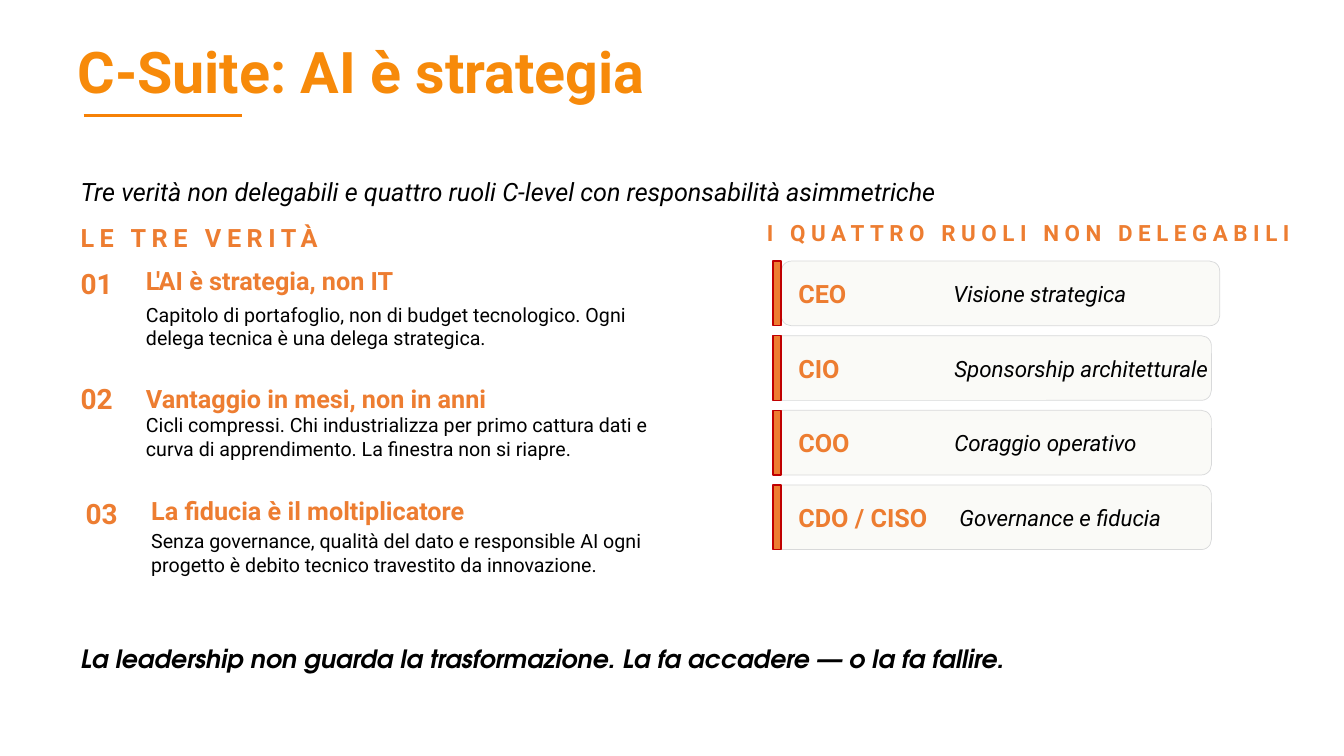
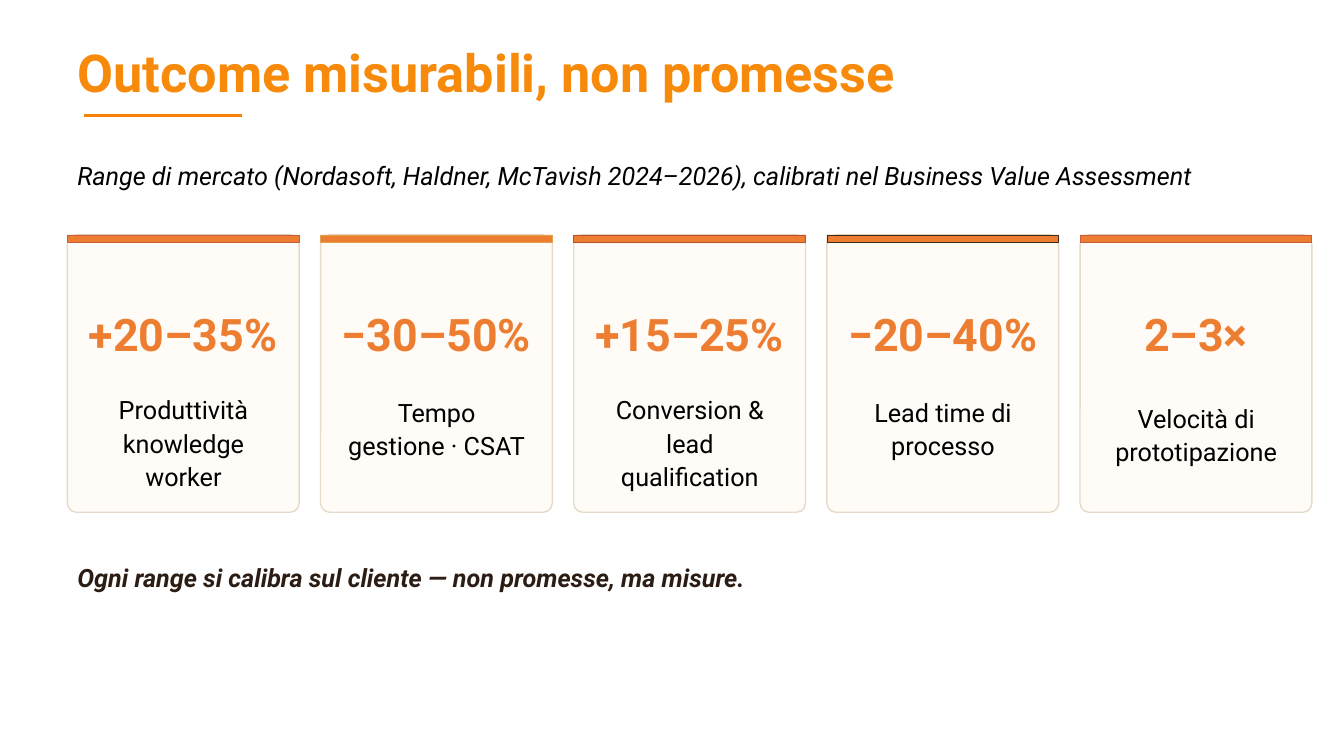
import pptx
import pptx.dml.color
import pptx.enum.shapes
import pptx.enum.text
import pptx.oxml
import pptx.util

Cm = pptx.util.Cm
Pt = pptx.util.Pt
RGBColor = pptx.dml.color.RGBColor
MSO_SHAPE = pptx.enum.shapes.MSO_SHAPE
MSO_ANCHOR = pptx.enum.text.MSO_ANCHOR
PP_ALIGN = pptx.enum.text.PP_ALIGN

FONT = "Roboto"
BLACK = RGBColor(0x00, 0x00, 0x00)
BROWN = RGBColor(0x2B, 0x1D, 0x14)
ORANGE = RGBColor(0xED, 0x7D, 0x31)
TITLE_ORANGE = RGBColor(0xF7, 0x8A, 0x0A)
RULE_ORANGE = RGBColor(0xF6, 0x81, 0x06)
RED = RGBColor(0xC0, 0x00, 0x00)
ROLE_FILL = RGBColor(0xFA, 0xFA, 0xF7)
ROLE_LINE = RGBColor(0xD8, 0xD9, 0xDA)
CARD_FILL = RGBColor(0xFF, 0xFC, 0xF7)
CARD_LINE = RGBColor(0xE6, 0xDA, 0xC8)
RUST = RGBColor(0xC7, 0x5D, 0x3A)
GOLD = RGBColor(0xE0, 0xA2, 0x4E)
BRICK = RGBColor(0xB5, 0x51, 0x2F)
DARK = RGBColor(0x3A, 0x2A, 0x1E)


def add_text(s, x, y, w, h, text, size, color=BLACK, bold=False, italic=False,
             font=FONT, align=PP_ALIGN.LEFT, spacing=None, tracking=None, inset=True):
    """Add a one-paragraph text box, lengths in cm, tracking in points."""
    tf = s.shapes.add_textbox(Cm(x), Cm(y), Cm(w), Cm(h)).text_frame
    tf.word_wrap = True
    tf.vertical_anchor = MSO_ANCHOR.MIDDLE
    if not inset:
        tf.margin_left = tf.margin_right = tf.margin_top = tf.margin_bottom = 0
    tf.text = text
    p = tf.paragraphs[0]
    p.alignment = align
    if spacing:
        p.line_spacing = spacing
    r = p.runs[0]
    r.font.name = font
    r.font.size = Pt(size)
    r.font.bold = bold
    r.font.italic = italic
    r.font.color.rgb = color
    if tracking:
        r.font._element.set("spc", str(tracking * 100))


def add_box(s, x, y, w, h, fill, line, weight, radius=None):
    """Add a rectangle, rounded when a radius ratio is given; lengths in cm."""
    kind = MSO_SHAPE.RECTANGLE if radius is None else MSO_SHAPE.ROUNDED_RECTANGLE
    sp = s.shapes.add_shape(kind, Cm(x), Cm(y), Cm(w), Cm(h))
    if radius is not None:
        sp.adjustments[0] = radius
    sp.shadow.inherit = False
    sp.fill.solid()
    sp.fill.fore_color.rgb = fill
    sp.line.color.rgb = line
    sp.line.width = Pt(weight)


prs = pptx.Presentation()
prs.slide_width = Cm(33.87)
prs.slide_height = Cm(19.05)
layout = prs.slide_layouts[5]

# Titles with the rule below them
slides = []
for title, size in [("C-Suite: AI è strategia", 41),
                    ("Outcome misurabili, non promesse", 37.3)]:
    s = prs.slides.add_slide(layout)
    sp = s.shapes.title
    sp.left, sp.top, sp.width, sp.height = Cm(1.7), Cm(0.91), Cm(29.54), Cm(1.98)
    tf = sp.text_frame
    tf.auto_size = pptx.enum.text.MSO_AUTO_SIZE.NONE
    tf.vertical_anchor = MSO_ANCHOR.MIDDLE
    tf.text = title
    p = tf.paragraphs[0]
    p.alignment = PP_ALIGN.LEFT
    p.line_spacing = 0.9
    r = p.runs[0]
    r.font.name = FONT
    r.font.size = Pt(size)
    r.font.bold = True
    r.font.color.rgb = TITLE_ORANGE
    rule = s.shapes.add_connector(pptx.enum.shapes.MSO_CONNECTOR.STRAIGHT,
                                  Cm(2.11), Cm(2.92), Cm(6.1), Cm(2.92))
    rule.line.color.rgb = RULE_ORANGE
    rule.line.width = Pt(2.25)
    rule._element.spPr.append(pptx.oxml.parse_xml(
        '<a:effectLst xmlns:a="http://schemas.openxmlformats.org/drawingml/2006/main"/>'))
    slides.append(s)

# Slide 1: three truths and four roles
s = slides[0]
add_text(s, 2.03, 4.19, 31.24, 1.27,
         "Tre verità non delegabili e quattro ruoli C-level con responsabilità asimmetriche",
         18, italic=True, inset=False)
add_text(s, 2.03, 5.61, 15.24, 0.76, "LE TRE VERITÀ", 18, ORANGE, bold=True,
         tracking=4, inset=False)

truths = [
    (2.03, 6.63, 6.63, 7.14, "L'AI è strategia, non IT",
     "Capitolo di portafoglio, non di budget tecnologico. Ogni delega tecnica è una "
     "delega strategica."),
    (2.03, 9.53, 9.6, 9.93, "Vantaggio in mesi, non in anni",
     "Cicli compressi. Chi industrializza per primo cattura dati e curva di "
     "apprendimento. La finestra non si riapre."),
    (2.16, 12.42, 12.42, 12.85, "La fiducia è il moltiplicatore",
     "Senza governance, qualità del dato e responsible AI ogni progetto è debito "
     "tecnico travestito da innovazione."),
]
for i, (x, number_y, head_y, body_y, head, body) in enumerate(truths, 1):
    add_text(s, x, number_y, 1.52, 1.02, f"{i:02d}", 20, ORANGE, bold=True, inset=False)
    add_text(s, x + 1.65, head_y, 13.46, 0.89, head, 18, ORANGE, bold=True, inset=False)
    add_text(s, x + 1.65, body_y, 13.46, 2.16, body, 14, inset=False)

add_text(s, 19.33, 5.49, 15.24, 0.76, "I QUATTRO RUOLI NON DELEGABILI", 16, ORANGE,
         bold=True, tracking=4, inset=False)
roles = [
    (19.69, "CEO", 24.03, "Visione strategica"),
    (19.48, "CIO", 24.05, "Sponsorship architetturale"),
    (19.48, "COO", 24.05, "Coraggio operativo"),
    (19.48, "CDO / CISO", 24.18, "Governance e fiducia"),
]
for i, (card_x, role, duty_x, duty) in enumerate(roles):
    y = 6.58 + i * 1.88
    add_box(s, card_x, y, 11.05, 1.63, ROLE_FILL, ROLE_LINE, 0.5, radius=0.156)
    add_box(s, 19.48, y, 0.2, 1.63, ORANGE, RED, 1)
    add_text(s, 20.12, y, 4.06, 1.63, role, 18, ORANGE, bold=True, inset=False)
    add_text(s, duty_x, y, 9.65, 1.63, duty, 16, italic=True, inset=False)

add_text(s, 2.03, 16.1, 30.73, 0.97,
         "La leadership non guarda la trasformazione. La fa accadere — o la fa fallire.",
         18, bold=True, italic=True, font="TeX Gyre Adventor", inset=False)

# Slide 2: five outcome cards
s = slides[1]
add_text(s, 1.7, 3.86, 31.24, 1.14,
         "Range di mercato (Nordasoft, Haldner, McTavish 2024–2026), calibrati nel "
         "Business Value Assessment", 18, italic=True)
outcomes = [
    ("+20–35%", "Produttività knowledge worker", 9.86, RUST),
    ("−30–50%", "Tempo gestione · CSAT", 9.5, GOLD),
    ("+15–25%", "Conversion & lead qualification", 9.86, BRICK),
    ("−20–40%", "Lead time di processo", 9.5, DARK),
    ("2–3×", "Velocità di prototipazione", 9.65, RUST),
]
for i, (value, label, label_y, edge) in enumerate(outcomes):
    x = 1.7 + i * 6.38
    add_box(s, x, 5.92, 5.84, 6.99, CARD_FILL, CARD_LINE, 1, radius=0.039)
    add_box(s, x, 5.92, 5.84, 0.2, ORANGE, edge, 0.5)
    add_text(s, x + 0.2, 7.19, 5.44, 2.41, value, 32, ORANGE, bold=True,
             align=PP_ALIGN.CENTER)
    add_text(s, x + 0.41, label_y, 5.03, 2.54, label, 18, align=PP_ALIGN.CENTER,
             spacing=1.1)
add_text(s, 1.7, 14.05, 31.24, 1.02,
         "Ogni range si calibra sul cliente — non promesse, ma misure.",
         18, BROWN, bold=True, italic=True)

prs.save("out.pptx")
